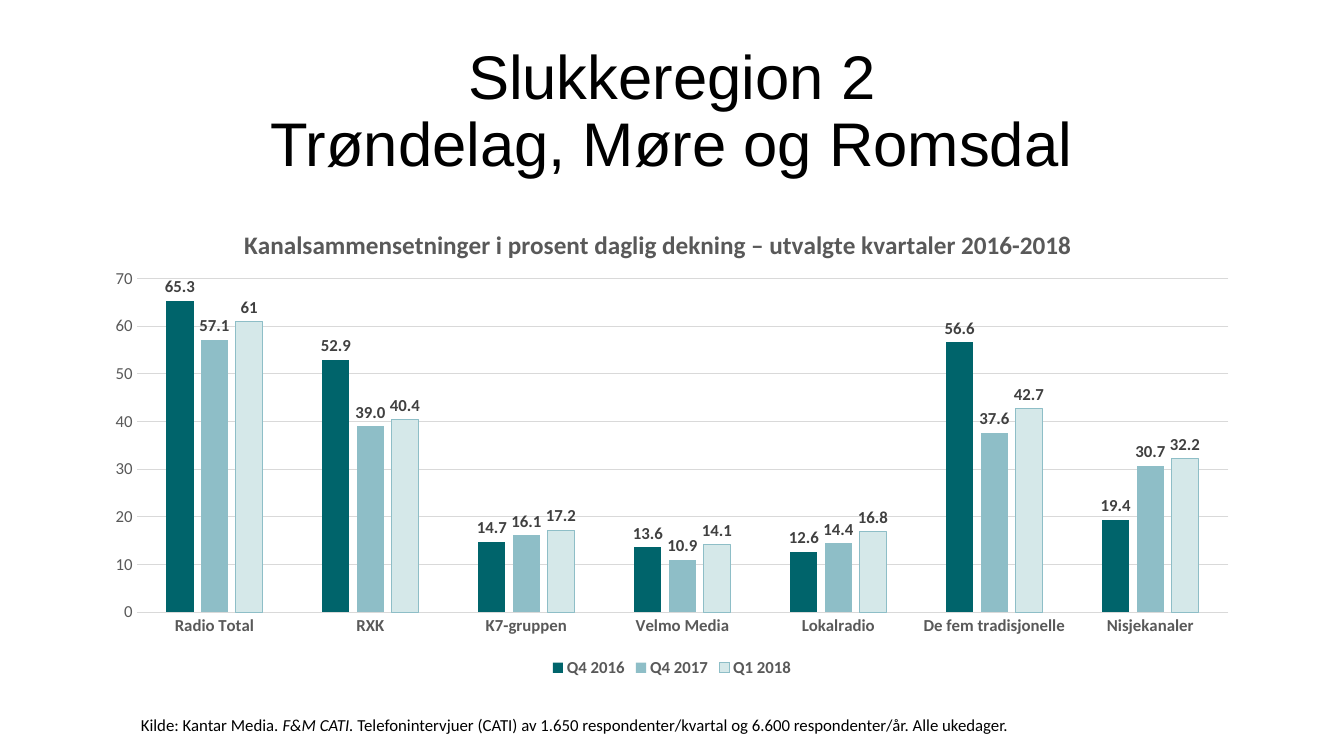
from lxml import etree
from pptx import Presentation
from pptx.chart.data import CategoryChartData
from pptx.dml.color import RGBColor
from pptx.enum.chart import XL_CHART_TYPE, XL_LABEL_POSITION, XL_LEGEND_POSITION, XL_TICK_MARK
from pptx.enum.text import MSO_ANCHOR, PP_ALIGN
from pptx.oxml.ns import qn
from pptx.util import Cm, Pt

COLUMNS = XL_CHART_TYPE.COLUMN_CLUSTERED
OUTSIDE = XL_LABEL_POSITION.OUTSIDE_END
BOTTOM = XL_LEGEND_POSITION.BOTTOM
NO_TICK = XL_TICK_MARK.NONE
MIDDLE, TOP = MSO_ANCHOR.MIDDLE, MSO_ANCHOR.TOP
CENTER, LEFT = PP_ALIGN.CENTER, PP_ALIGN.LEFT

BLACK, GREY, DARK_GREY, RULE = "000000", "595959", "404040", "D9D9D9"
TEAL, MID_TEAL, PALE_TEAL = "00646B", "8EBEC7", "D5E8E9"

CHANNELS = ["Radio Total", "RXK", "K7-gruppen", "Velmo Media",
            "Lokalradio", "De fem tradisjonelle", "Nisjekanaler"]
# name, values, fill, outline, label format
QUARTERS = [
    ("Q4 2016", [65.3, 52.9, 14.7, 13.6, 12.6, 56.6, 19.4], TEAL, None, "General"),
    ("Q4 2017", [57.1, 39, 16.1, 10.9, 14.4, 37.6, 30.7], MID_TEAL, None, "0.0"),
    ("Q1 2018", [61, 40.4, 17.2, 14.1, 16.8, 42.7, 32.2], PALE_TEAL, MID_TEAL, "General"),
]


def rgb(value):
    return RGBColor.from_string(value)


def place(element, index, **fractions):
    """Give a chart part a manual layout, in fractions of the chart."""
    for old in element.findall(qn("c:layout")):
        element.remove(old)
    layout = etree.Element(qn("c:layout"))
    manual = etree.SubElement(layout, qn("c:manualLayout"))
    if "w" in fractions:
        etree.SubElement(manual, qn("c:layoutTarget"), val="inner")
    for side in "xy":
        etree.SubElement(manual, qn(f"c:{side}Mode"), val="edge")
    for name, fraction in fractions.items():
        etree.SubElement(manual, qn(f"c:{name}"), val=str(fraction))
    element.insert(index, layout)


class SlideBuilder:
    def __init__(self, page, text_font="Calibri"):
        self.page = page
        self.text_font = text_font

    def style(self, font, color=BLACK, **format_values):
        values = {"name": self.text_font, "size": Pt(12), "bold": False, **format_values}
        for name, value in values.items():
            setattr(font, name, value)
        font.color.rgb = rgb(color)

    def rule(self, line, color):
        line.color.rgb = rgb(color)
        line.width = Pt(0.75)

    def text(self, area, lines, align=LEFT, anchor=TOP, spacing=None, **format_values):
        """Add one paragraph; each line is a list of (text, italic) spans."""
        box = self.page.shapes.add_textbox(*map(Cm, area))
        frame = box.text_frame
        frame.word_wrap = True
        frame.vertical_anchor = anchor
        para = frame.paragraphs[0]
        para.alignment = align
        para.line_spacing = spacing
        for number, spans in enumerate(lines):
            if number:
                para.add_line_break()
            for text, italic in spans:
                span = para.add_run()
                span.text = text
                self.style(span.font, italic=italic, **format_values)

    def chart(self, area, title):
        data = CategoryChartData()
        data.categories = CHANNELS
        for name, values, *_ in QUARTERS:
            data.add_series(name, values)
        chart = self.page.shapes.add_chart(COLUMNS, *map(Cm, area), data).chart
        self.style(chart.font, size=Pt(10))

        chart.has_title = True
        heading = chart.chart_title.text_frame.paragraphs[0].add_run()
        heading.text = title
        self.style(heading.font, GREY, size=Pt(18), bold=True)
        place(chart.chart_title._element, 1, x=0.127, y=0.044)
        place(chart.plots[0]._element.getparent(), 0, x=0.038, y=0.16, w=0.942, h=0.695)

        chart.has_legend = True
        chart.legend.position = BOTTOM
        chart.legend.include_in_layout = False
        self.style(chart.legend.font, GREY, bold=True)
        self.axes(chart)
        self.columns(chart.plots[0])

    def axes(self, chart):
        channels, percent = chart.category_axis, chart.value_axis
        for axis, bold in ((channels, True), (percent, False)):
            axis.major_tick_mark = axis.minor_tick_mark = NO_TICK
            self.style(axis.tick_labels.font, GREY, bold=bold)
        self.rule(channels.format.line, RULE)
        percent.format.line.fill.background()
        percent.has_major_gridlines = True
        self.rule(percent.major_gridlines.format.line, RULE)
        percent.minimum_scale, percent.maximum_scale, percent.major_unit = 0, 70, 10

    def columns(self, plot):
        plot.gap_width, plot.overlap = 219, -27
        plot.vary_by_categories = False
        for series, (_, _, fill, outline, label_format) in zip(plot.series, QUARTERS):
            series.format.fill.solid()
            series.format.fill.fore_color.rgb = rgb(fill)
            if outline:
                self.rule(series.format.line, outline)
            labels = series.data_labels
            labels.show_value = True
            labels.position = OUTSIDE
            labels.number_format = label_format
            labels.number_format_is_linked = False
            self.style(labels.font, DARK_GREY, bold=True)


def main():
    deck = Presentation()
    deck.slide_width, deck.slide_height = Cm(33.87), Cm(19.05)
    slide = SlideBuilder(deck.slides.add_slide(deck.slide_layouts[6]))
    slide.text((2.33, 1.01, 29.21, 3.68),
               [[("Slukkeregion 2", False)], [("Trøndelag, Møre og Romsdal", False)]],
               CENTER, MIDDLE, 0.9, name="Arial", size=Pt(44))
    slide.chart((2.33, 5.08, 29.21, 12.1),
                "Kanalsammensetninger i prosent daglig dekning – utvalgte kvartaler 2016-2018")
    slide.text((3.3, 17.88, 28.52, 0.77), [[
        ("Kilde: Kantar Media. ", False),
        ("F&M CATI. ", True),
        ("Telefonintervjuer (CATI) av 1.650 respondenter/kvartal og "
         "6.600 respondenter/år. Alle ukedager.", False)]])
    deck.save("out.pptx")


if __name__ == "__main__":
    main()
